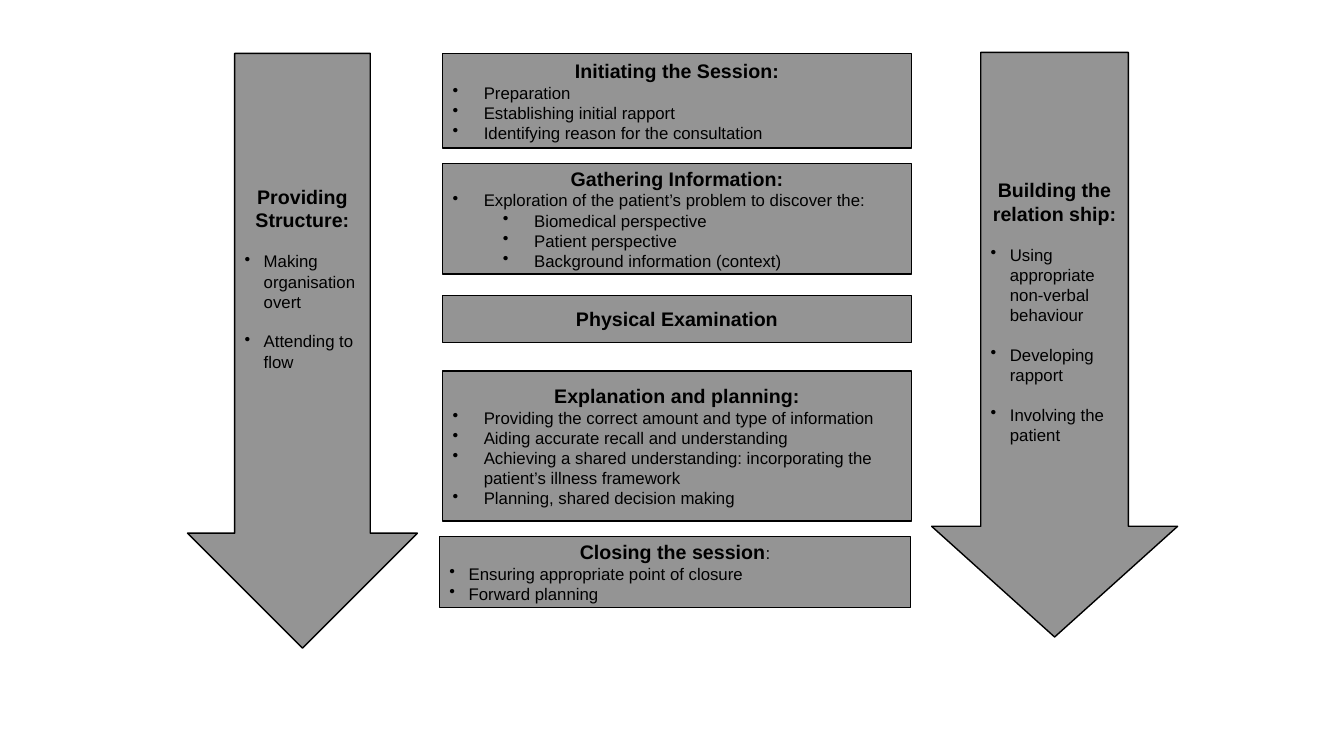
import pptx
import pptx.util
import pptx.dml.color
import pptx.enum.shapes
import pptx.enum.text
import pptx.oxml
import pptx.oxml.ns

PX = 9144  # 100 px to the inch
COLORS = {"fill": "949494", "ink": "000000"}
FONT = "Arial"
SHAPE = pptx.enum.shapes.MSO_SHAPE
ALIGN = pptx.enum.text.PP_ALIGN
STEP = 50  # extra indent of a second-level point

# top, height, title, points, sub-points
STAGES = [
    (53, 94, "Initiating the Session:",
     ["Preparation", "Establishing initial rapport",
      "Identifying reason for the consultation"], []),
    (162, 110, "Gathering Information:",
     ["Exploration of the patient’s problem to discover the:"],
     ["Biomedical perspective", "Patient perspective",
      "Background information (context)"]),
    (293, 47, "Physical Examination", [], []),
    (368, 149, "Explanation and planning:",
     ["Providing the correct amount and type of information",
      "Aiding accurate recall and understanding",
      "Achieving a shared understanding: incorporating the "
      "patient’s illness framework",
      "Planning, shared decision making"], []),
]


def color(name):
    return pptx.dml.color.RGBColor.from_string(COLORS[name])


def style(font, size, bold):
    font.name = FONT
    font.size = pptx.util.Pt(size)
    font.bold = bold
    font.color.rgb = color("ink")


def add_panel(slide, kind, box):
    """Add a grey outlined shape with its text centred in height."""
    shape = slide.shapes.add_shape(kind, *(n * PX for n in box))
    shape.shadow.inherit = False
    shape.fill.solid()
    shape.fill.fore_color.rgb = color("fill")
    shape.line.color.rgb = color("ink")
    shape.line.width = pptx.util.Pt(1)
    frame = shape.text_frame
    frame.word_wrap = True
    frame.vertical_anchor = pptx.enum.text.MSO_ANCHOR.MIDDLE
    return shape


def add_title(frame, text):
    para = frame.paragraphs[0]
    para.text = text
    para.alignment = ALIGN.CENTER
    style(para.runs[0].font, 14, True)
    return para


def add_point(frame, text, hang, level=0, gap=0):
    """Add a bulleted paragraph with a hanging indent, gap points below the last."""
    para = frame.add_paragraph()
    para.text = text
    para.level = level
    para.alignment = ALIGN.LEFT
    props = para._p.get_or_add_pPr()
    props.set("marL", str((hang + level * STEP) * PX))
    props.set("indent", str(-hang * PX))
    para.space_before = pptx.util.Pt(gap)
    bullet = pptx.oxml.parse_xml(
        '<a:buChar %s char="•"/>' % pptx.oxml.ns.nsdecls("a"))
    props.append(bullet)
    style(para.runs[0].font, 12, False)


def add_stage(slide, box, title, points, subs=(), hang=31):
    frame = add_panel(slide, SHAPE.RECTANGLE, box).text_frame
    head = add_title(frame, title)
    for text in points:
        add_point(frame, text, hang)
    for text in subs:
        add_point(frame, text, hang, level=1)
    return head


def add_arrow(slide, box, shaft, tip, title, points, foot=5):
    """Add a down arrow; foot is the space kept free under its text."""
    shape = add_panel(slide, SHAPE.DOWN_ARROW, box)
    shape.adjustments[0] = shaft
    shape.adjustments[1] = tip
    frame = shape.text_frame
    frame.margin_bottom = foot * PX
    add_title(frame, title)
    for text in points:
        add_point(frame, text, 19, gap=14)


def main():
    deck = pptx.Presentation()
    deck.slide_width = 1333 * PX
    deck.slide_height = 750 * PX
    slide = deck.slides.add_slide(deck.slide_layouts[6])

    add_arrow(slide, (186, 53, 228, 590), 0.59, 0.5, "Providing Structure:",
              ["Making organisation overt", "Attending to flow"], foot=82)
    add_arrow(slide, (924, 52, 244, 580), 0.6, 0.45,
              "Building the relation ship:",
              ["Using appropriate non-verbal behaviour",
               "Developing rapport", "Involving the patient"])

    for top, height, title, points, subs in STAGES:
        add_stage(slide, (439, top, 465, height), title, points, subs)
    head = add_stage(slide, (436, 532, 467, 71), "Closing the session",
                     ["Ensuring appropriate point of closure",
                      "Forward planning"], hang=19)
    colon = head.add_run()
    colon.text = ":"
    style(colon.font, 12, False)

    deck.save("out.pptx")


if __name__ == "__main__":
    main()
